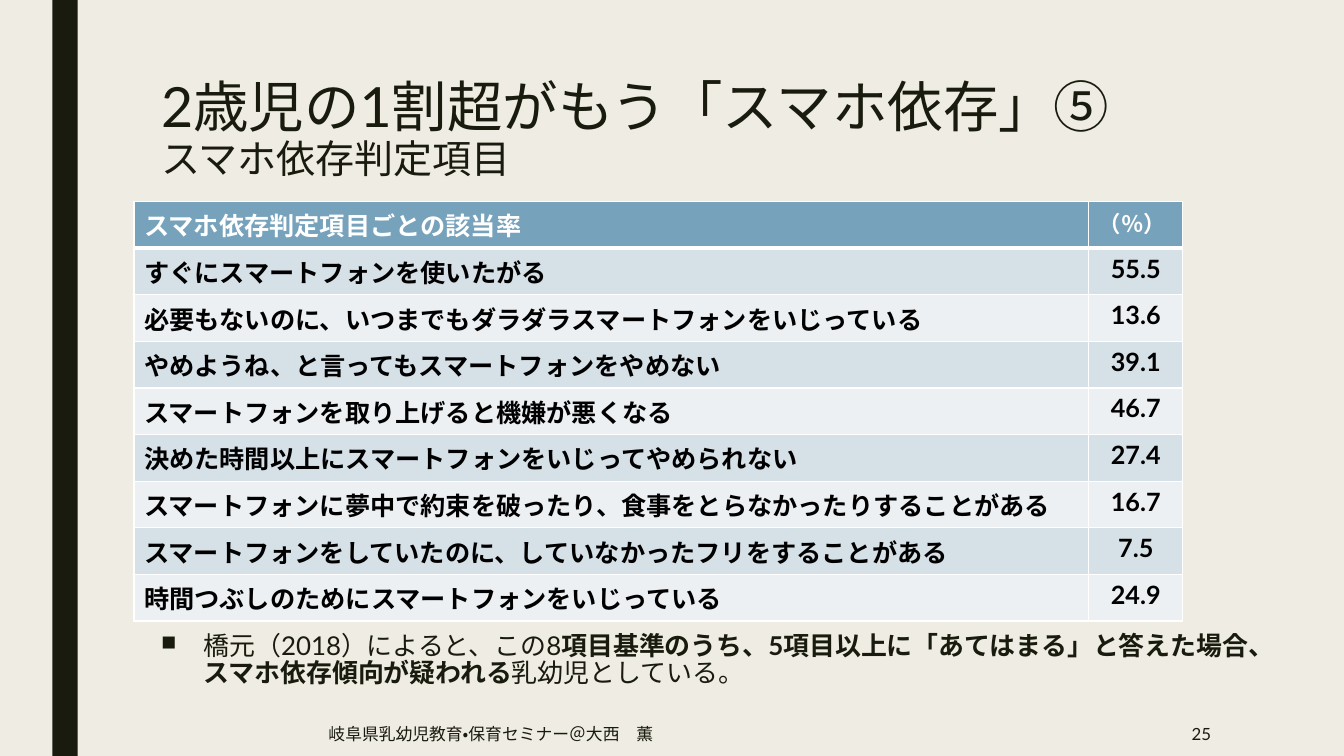
import pptx
import pptx.dml.color
import pptx.enum.lang
import pptx.enum.shapes
import pptx.enum.text
import pptx.oxml
import pptx.oxml.ns
import pptx.util

Inches = pptx.util.Inches
Pt = pptx.util.Pt
ALIGN = pptx.enum.text.PP_ALIGN
ANCHOR = pptx.enum.text.MSO_ANCHOR

COLORS = {
    "background": "EFEDE3",
    "ink": "191B0E",
    "header": "77A2BB",
    "odd_row": "D6E0E7",
    "even_row": "ECF0F3",
    "white": "FFFFFF",
    "black": "000000",
}

ITEMS = [
    ("すぐにスマートフォンを使いたがる", "55.5"),
    ("必要もないのに、いつまでもダラダラスマートフォンをいじっている", "13.6"),
    ("やめようね、と言ってもスマートフォンをやめない", "39.1"),
    ("スマートフォンを取り上げると機嫌が悪くなる", "46.7"),
    ("決めた時間以上にスマートフォンをいじってやめられない", "27.4"),
    ("スマートフォンに夢中で約束を破ったり、食事をとらなかったりすることがある", "16.7"),
    ("スマートフォンをしていたのに、していなかったフリをすることがある", "7.5"),
    ("時間つぶしのためにスマートフォンをいじっている", "24.9"),
]


def rgb(name):
    return pptx.dml.color.RGBColor.from_string(COLORS[name])


def add_text(paragraph, text, size=18, color="ink", bold=False, font="Lato"):
    run = paragraph.add_run()
    run.text = text
    run.font.name = font
    run.font.size = Pt(size)
    run.font.bold = bold
    run.font.color.rgb = rgb(color)
    run.font.language_id = pptx.enum.lang.MSO_LANGUAGE_ID.JAPANESE


class SlideBuilder:
    def __init__(self, presentation):
        self.slide = presentation.slides.add_slide(presentation.slide_layouts[6])
        self.slide.background.fill.solid()
        self.slide.background.fill.fore_color.rgb = rgb("background")

    def bar(self, left, top, width, height, color):
        shape = self.slide.shapes.add_shape(
            pptx.enum.shapes.MSO_SHAPE.RECTANGLE,
            Inches(left), Inches(top), Inches(width), Inches(height))
        shape.shadow.inherit = False
        shape.fill.solid()
        shape.fill.fore_color.rgb = rgb(color)
        shape.line.fill.background()

    def text_box(self, left, top, width, height, anchor=ANCHOR.TOP,
                 align=ALIGN.LEFT, line_spacing=1.0, inset_top=0.05):
        """Add a wrapped text box and return its first paragraph."""
        shape = self.slide.shapes.add_textbox(
            Inches(left), Inches(top), Inches(width), Inches(height))
        frame = shape.text_frame
        frame.word_wrap = True
        frame.vertical_anchor = anchor
        frame.margin_top = Inches(inset_top)
        paragraph = frame.paragraphs[0]
        paragraph.alignment = align
        paragraph.line_spacing = line_spacing
        return paragraph

    def bullet(self, paragraph, character, indent, percent):
        properties = paragraph._p.get_or_add_pPr()
        properties.set("marL", str(Inches(indent)))
        properties.set("indent", str(-Inches(indent)))
        namespace = pptx.oxml.ns.nsdecls("a")
        properties.append(pptx.oxml.parse_xml(
            f'<a:buSzPct {namespace} val="{percent * 1000}"/>'))
        properties.append(pptx.oxml.parse_xml(
            f'<a:buChar {namespace} char="{character}"/>'))

    def cell(self, cell, text, fill, align=ALIGN.LEFT, bottom=1, **style):
        paragraph = cell.text_frame.paragraphs[0]
        paragraph.alignment = align
        add_text(paragraph, text, bold=True, **style)
        properties = cell._tc.get_or_add_tcPr()
        for side, width in (("L", 1), ("R", 1), ("T", 1), ("B", bottom)):
            properties.append(pptx.oxml.parse_xml(
                f'<a:ln{side} {pptx.oxml.ns.nsdecls("a")} w="{Pt(width)}">'
                f'<a:solidFill><a:srgbClr val="{COLORS["white"]}"/></a:solidFill>'
                f'</a:ln{side}>'))
        cell.fill.solid()
        cell.fill.fore_color.rgb = rgb(fill)

    def table(self, left, top, column_widths, height, header, rows):
        table = self.slide.shapes.add_table(
            len(rows) + 1, len(column_widths), Inches(left), Inches(top),
            Inches(sum(column_widths)), Inches(height)).table
        for column, width in zip(table.columns, column_widths):
            column.width = Inches(width)
        for index, (text, size) in enumerate(header):
            self.cell(table.cell(0, index), text, "header", bottom=3,
                      size=size, color="white")
        for number, (item, rate) in enumerate(rows, 1):
            fill = "odd_row" if number % 2 else "even_row"
            self.cell(table.cell(number, 0), item, fill, color="black")
            self.cell(table.cell(number, 1), rate, fill, ALIGN.CENTER, color="black")


def main():
    presentation = pptx.Presentation()
    presentation.slide_width = Inches(13.33)
    presentation.slide_height = Inches(7.5)
    builder = SlideBuilder(presentation)

    # Side bar
    builder.bar(0.52, 0, 0.25, 7.5, "ink")

    # Title
    title = builder.text_box(1.5, 0.75, 10.5, 1.62, line_spacing=0.89)
    add_text(title, "2歳児の1割超がもう「スマホ依存」⑤", size=39.6)
    title.add_line_break()
    add_text(title, "スマホ依存判定項目", size=27.9)

    # Note below the table
    note = builder.text_box(1.5, 5.78, 11, 1.12, line_spacing=0.84, inset_top=0.52)
    builder.bullet(note, "■", 0.42, percent=80)
    add_text(note, "橋元（2018）によると、この8", size=18.5)
    add_text(note, "項目基準のうち、5項目以上に「あてはまる」と答えた場合、"
                   "スマホ依存傾向が疑われる", size=18.5, bold=True)
    add_text(note, "乳幼児としている。", size=18.5)

    # Rates per item
    header = [("スマホ依存判定項目ごとの該当率", 18), ("（％）", 16)]
    builder.table(1.33, 2, [9.47, 0.93], 4.16, header, ITEMS)

    # Footer
    number = builder.text_box(10.36, 7.06, 1.75, 0.44, ANCHOR.MIDDLE, ALIGN.RIGHT)
    add_text(number, "25", size=12)
    footer = builder.text_box(3.16, 7.06, 6.87, 0.44, ANCHOR.MIDDLE)
    add_text(footer, "岐阜県乳幼児教育・保育セミナー＠大西　薫", size=12)

    presentation.save("out.pptx")


if __name__ == "__main__":
    main()
